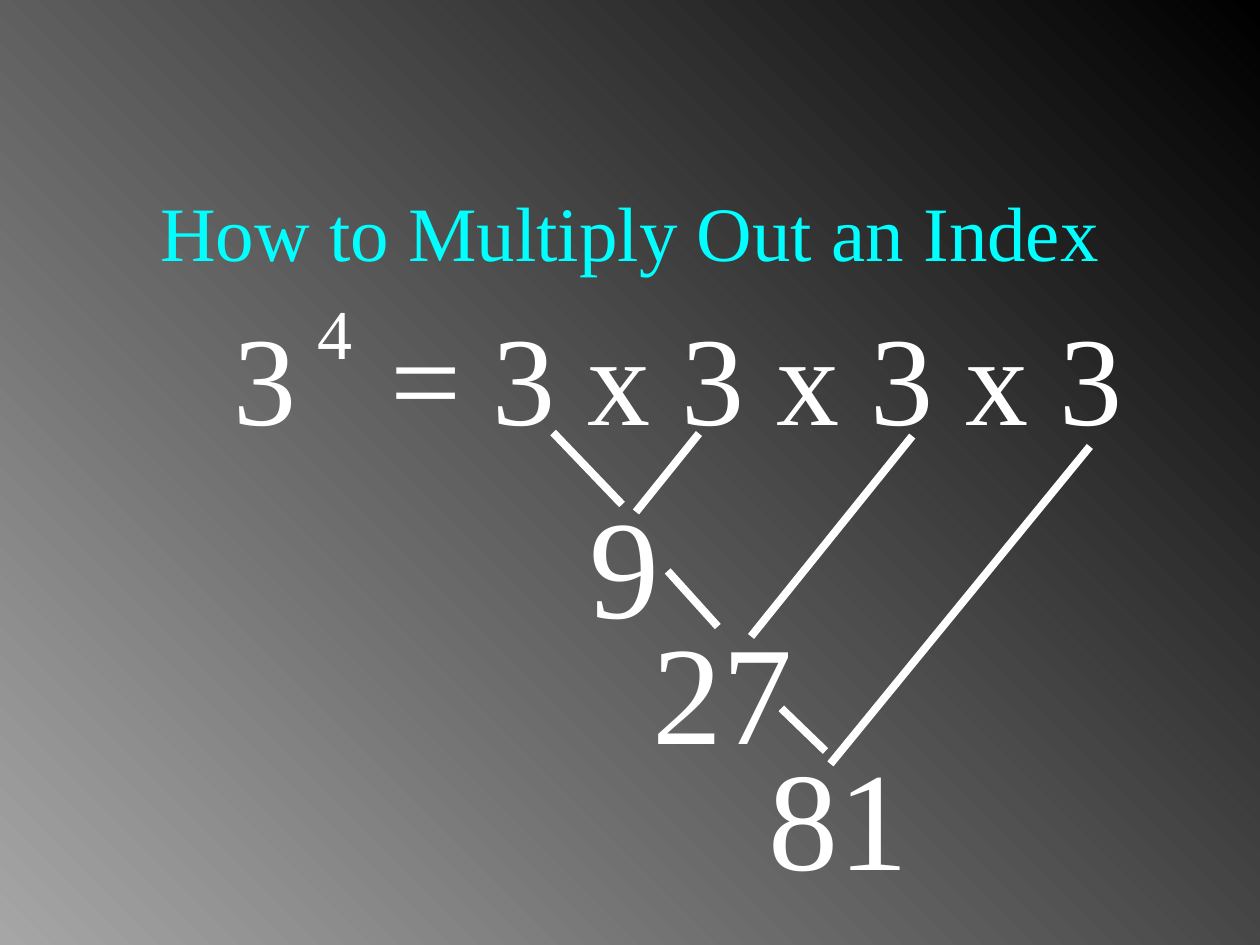
import pptx
import pptx.dml.color
import pptx.enum.shapes
import pptx.enum.text
import pptx.oxml.ns
import pptx.util
from lxml import etree

Cm = pptx.util.Cm
RGBColor = pptx.dml.color.RGBColor
ALIGN = pptx.enum.text.PP_ALIGN
ANCHOR = pptx.enum.text.MSO_ANCHOR

BLACK = RGBColor(0x00, 0x00, 0x00)
GREY = RGBColor(0xA6, 0xA6, 0xA6)
WHITE = RGBColor(0xFF, 0xFF, 0xFF)
CYAN = RGBColor(0x00, 0xFF, 0xFF)


def add_text(shapes, box, text, size, color=WHITE, **frame_format):
    """Place one line of text in box (left, top, width, height in cm)."""
    frame = shapes.add_textbox(*map(Cm, box)).text_frame
    for name, value in ({"word_wrap": False} | frame_format).items():
        setattr(frame, name, value)
    para = frame.paragraphs[0]
    span = para.add_run()
    span.text = text
    for name, value in {"name": "Times New Roman", "size": pptx.util.Pt(size)}.items():
        setattr(span.font, name, value)
    span.font.color.rgb = color
    return para


def add_line(shapes, start, end):
    line = shapes.add_connector(
        pptx.enum.shapes.MSO_CONNECTOR.STRAIGHT, *map(Cm, start + end))
    line.line.color.rgb = WHITE
    line.line.width = pptx.util.Pt(4.5)
    properties = line._element.spPr
    etree.SubElement(properties, pptx.oxml.ns.qn("a:effectLst"))


def paint_background(page):
    fill = page.background.fill
    fill.gradient()
    fill.gradient_angle = 225
    for stop, color in zip(fill.gradient_stops, (BLACK, GREY)):
        stop.color.rgb = color


def add_title(page, box):
    para = add_text(page.shapes, box, "How to Multiply Out an Index", 44, CYAN,
                    word_wrap=True, vertical_anchor=ANCHOR.MIDDLE)
    para.alignment = ALIGN.CENTER


def add_equation(page, left, top):
    """Write the power and its expanded product."""
    add_text(page.shapes, (left + 3.17, top + 0.2, 15.29, 3.3), "= 3 x 3 x 3 x 3", 72)
    add_text(page.shapes, (left, top + 0.2, 1.78, 3.3), "3", 72)
    add_text(page.shapes, (left + 1.7, top, 1.22, 1.96), "4", 40)


def add_step(page, box, product, lines):
    """Group a product with the lines from its two factors."""
    shapes = page.shapes.add_group_shape().shapes
    left, top = box[:2]
    for line in lines:
        start, end = [(left + x, top + y) for x, y in line]
        add_line(shapes, start, end)
    add_text(shapes, box, product, 80)


def main():
    deck = pptx.Presentation()
    deck.slide_width, deck.slide_height = Cm(25.4), Cm(19.05)
    page = deck.slides.add_slide(deck.slide_layouts[6])
    paint_background(page)
    add_title(page, (1.91, 2.97, 21.59, 3.38))
    add_equation(page, 4.45, 5.72)

    # Running products: left, width, text, line ends relative to the number
    steps = [
        (11.63, 1.93, "9", [((-0.48, -0.81), (0.91, 0.64)),
                            ((2.46, -0.79), (1.19, 0.79))]),
        (12.9, 3.33, "27", [((0.56, -0.56), (1.57, 0.56)),
                            ((5.49, -3.28), (2.24, 0.76))]),
        (15.24, 3.33, "81", [((0.51, -0.33), (1.4, 0.53)),
                             ((6.73, -5.61), (1.5, 0.79))]),
    ]
    for index, (left, width, product, lines) in enumerate(steps):
        add_step(page, (left, 9.53 + 2.54 * index, width, 3.63), product, lines)

    deck.save("out.pptx")


if __name__ == "__main__":
    main()
